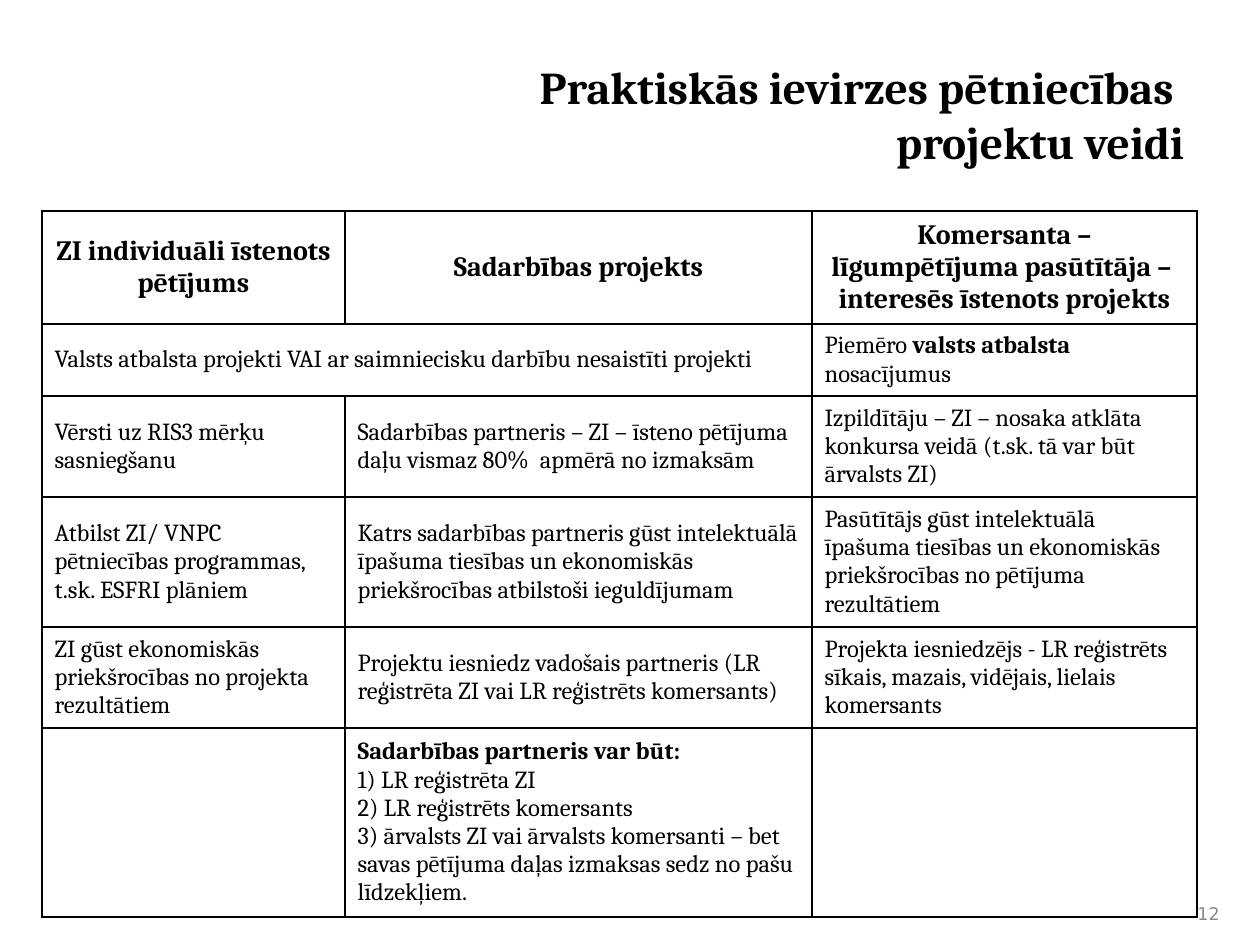
from lxml import etree
from pptx import Presentation
from pptx.dml.color import RGBColor
from pptx.enum.text import MSO_ANCHOR, PP_ALIGN
from pptx.oxml.ns import qn
from pptx.util import Pt

TOP, MIDDLE = MSO_ANCHOR.TOP, MSO_ANCHOR.MIDDLE
LEFT, CENTER, RIGHT = PP_ALIGN.LEFT, PP_ALIGN.CENTER, PP_ALIGN.RIGHT
TITLE_ONLY = 5
PX_PER_INCH = 126


class Theme:
    black = "000000"
    title = {"size": Pt(26), "name": "Cambria", "bold": True}
    header = {"size": Pt(16), "name": "Cambria", "bold": True}
    body = {"size": Pt(14), "name": "Cambria", "bold": False}
    strong = {**body, "bold": True}
    number = {"size": Pt(10), "name": "DejaVu Sans", "bold": False}
    number_color = "898989"
    border = Pt(1)


COLUMNS = [303, 467, 385]
ROWS = [113, 72, 101, 130, 101, 189]
HEADERS = [
    "ZI individuāli īstenots pētījums",
    "Sadarbības projekts",
    "Komersanta – līgumpētījuma pasūtītāja –  interesēs īstenots projekts",
]
# A cell is a list of (text, is strong) spans, or plain text
BODY = [
    ["Valsts atbalsta projekti VAI ar saimniecisku darbību nesaistīti projekti", "",
     [("Piemēro ", False), ("valsts atbalsta ", True), ("nosacījumus", False)]],
    ["Vērsti uz RIS3 mērķu sasniegšanu",
     "Sadarbības partneris – ZI – īsteno pētījuma daļu vismaz 80%  apmērā no izmaksām",
     "Izpildītāju – ZI – nosaka atklāta konkursa veidā (t.sk. tā var būt ārvalsts ZI)"],
    ["Atbilst ZI/ VNPC  pētniecības programmas, t.sk. ESFRI plāniem",
     "Katrs sadarbības partneris gūst intelektuālā īpašuma tiesības un ekonomiskās "
     "priekšrocības atbilstoši ieguldījumam",
     "Pasūtītājs gūst intelektuālā īpašuma tiesības un ekonomiskās priekšrocības "
     "no pētījuma rezultātiem"],
    ["ZI gūst ekonomiskās priekšrocības no projekta rezultātiem",
     "Projektu iesniedz vadošais partneris (LR reģistrēta ZI vai LR reģistrēts komersants)",
     "Projekta iesniedzējs - LR reģistrēts sīkais, mazais, vidējais, lielais komersants"],
    ["", [("Sadarbības partneris var būt:", True)], ""],
]
PARTNERS = [
    " LR reģistrēta ZI",
    " LR reģistrēts komersants",
    " ārvalsts ZI vai ārvalsts komersanti – bet savas pētījuma daļas izmaksas "
    "sedz no pašu līdzekļiem.",
]


def px(length):
    return round(length * 914400 / PX_PER_INCH)


def set_font(font, values, color=Theme.black):
    for name, value in values.items():
        setattr(font, name, value)
    font.color.rgb = RGBColor.from_string(color)


def add_span(para, text, values):
    span = para.add_run()
    span.text = text
    set_font(span.font, values)


def number_para(para):
    properties = para._p.get_or_add_pPr()
    properties.set("marL", "0")
    properties.set("indent", "0")
    etree.SubElement(properties, qn("a:buFont"), typeface="+mj-lt")
    etree.SubElement(properties, qn("a:buAutoNum"), type="arabicParenR")


def outline_cell(cell):
    properties = cell._tc.get_or_add_tcPr()
    for position, side in enumerate(("lnL", "lnR", "lnT", "lnB")):
        line = etree.Element(qn("a:" + side), w=str(Theme.border))
        fill = etree.SubElement(line, qn("a:solidFill"))
        etree.SubElement(fill, qn("a:srgbClr"), val=Theme.black)
        properties.insert(position, line)


def fill_cell(cell, content, values, align):
    cell.fill.background()
    cell.vertical_anchor = MIDDLE
    outline_cell(cell)
    para = cell.text_frame.paragraphs[0]
    para.alignment = align
    if not content:
        set_font(para.font, values)
    elif isinstance(content, str):
        add_span(para, content, values)
    else:
        for text, strong in content:
            add_span(para, text, Theme.strong if strong else values)


def place_title(page, left, top, width, height):
    title = page.shapes.title
    title.left, title.top, title.width, title.height = map(px, (left, top, width, height))
    frame = title.text_frame
    frame.vertical_anchor = TOP
    frame.text = "Praktiskās ievirzes pētniecības \vprojektu veidi"
    para = frame.paragraphs[0]
    para.alignment = RIGHT
    for span in para.runs:
        set_font(span.font, Theme.title)


def add_project_table(page, left, top):
    table = page.shapes.add_table(
        len(ROWS), len(COLUMNS), px(left), px(top), px(sum(COLUMNS)), px(sum(ROWS))
    ).table
    table.horz_banding = table.first_row = False
    for column, width in zip(table.columns, COLUMNS):
        column.width = px(width)
    for row, height in zip(table.rows, ROWS):
        row.height = px(height)

    # Header row, then the body rows
    for column, text in enumerate(HEADERS):
        fill_cell(table.cell(0, column), text, Theme.header, CENTER)
    for row, contents in enumerate(BODY, 1):
        for column, content in enumerate(contents):
            fill_cell(table.cell(row, column), content, Theme.body, LEFT)
    table.cell(1, 0).merge(table.cell(1, 1))

    # Numbered list of possible partners
    partners = table.cell(len(BODY), 1).text_frame
    for text in PARTNERS:
        para = partners.add_paragraph()
        number_para(para)
        add_span(para, text, Theme.body)


def add_page_number(page, left, top, width, height):
    box = page.shapes.add_textbox(*map(px, (left, top, width, height)))
    frame = box.text_frame
    frame.word_wrap = True
    frame.vertical_anchor = MIDDLE
    para = frame.paragraphs[0]
    para.alignment = RIGHT
    para.text = "12"
    set_font(para.runs[0].font, Theme.number, Theme.number_color)


def main():
    deck = Presentation()
    deck.slide_width, deck.slide_height = px(1260), px(945)
    page = deck.slides.add_slide(deck.slide_layouts[TITLE_ONLY])
    place_title(page, 230, 53, 967, 142)
    add_project_table(page, 42, 211)
    add_page_number(page, 1162, 892, 70, 42)
    deck.save("out.pptx")


if __name__ == "__main__":
    main()
